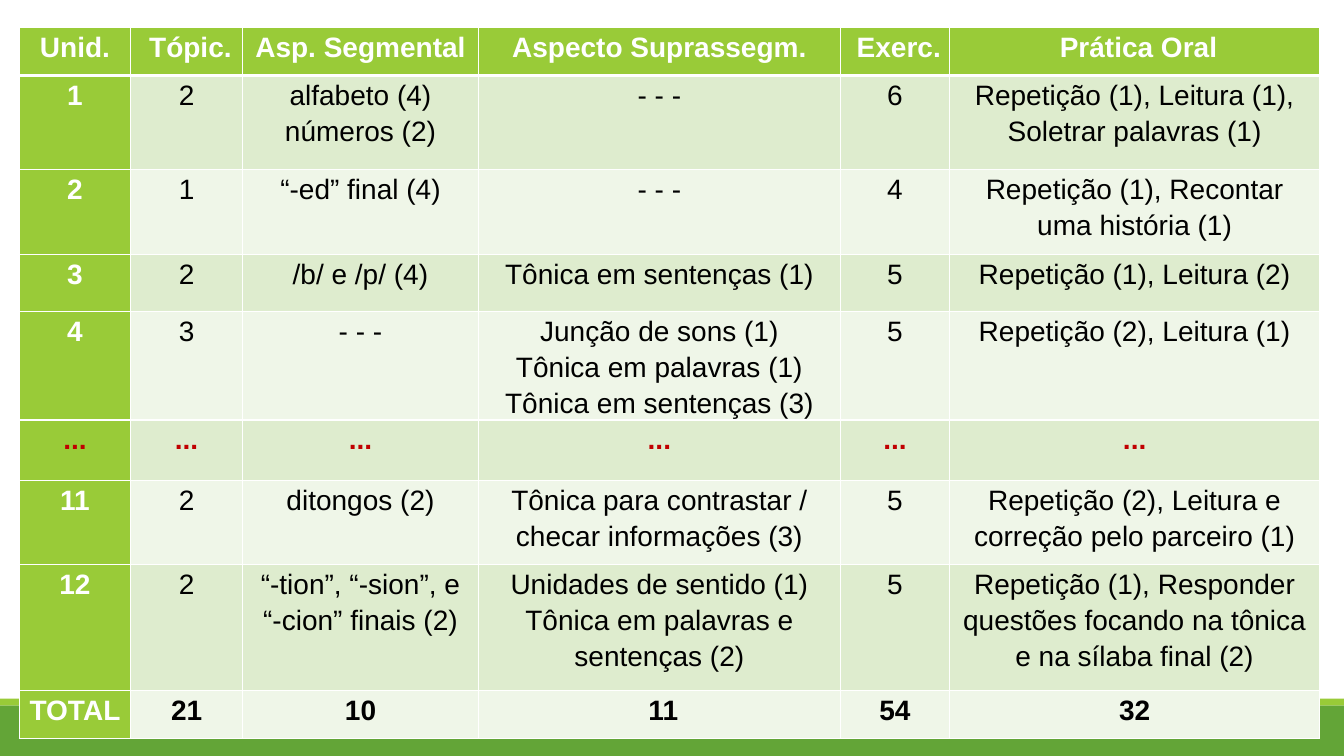
from lxml import etree
from pptx import Presentation
from pptx.dml.color import RGBColor
from pptx.enum.shapes import MSO_SHAPE
from pptx.enum.text import MSO_ANCHOR, PP_ALIGN
from pptx.oxml.ns import qn
from pptx.util import Pt

RECTANGLE = MSO_SHAPE.RECTANGLE
CENTER = PP_ALIGN.CENTER
TOP = MSO_ANCHOR.TOP

SLIDE_WIDTH, SLIDE_HEIGHT = 960, 540
GREEN, DARK_GREEN = "99CB38", "63A537"
ROW_FILLS = ("DEECCE", "EFF6E8")
WHITE, BLACK, RED = "FFFFFF", "000000", "C00000"

COLUMN_WIDTHS = (79.5, 80, 168.5, 258.5, 78, 264.5)
ROW_HEIGHTS = (34.5, 67, 61, 40.5, 77.5, 43.5, 60, 90, 34)
ELLIPSIS = "..."
ROWS = (
    ("Unid.", " Tópic.", "Asp. Segmental", "Aspecto Suprassegm.", " Exerc.", " Prática Oral"),
    ("1", "2", "alfabeto (4)\nnúmeros (2)", "- - -", "6",
     "Repetição (1), Leitura (1), Soletrar palavras (1)"),
    ("2", "1", "“-ed” final (4)", "- - -", "4", "Repetição (1), Recontar uma história (1)"),
    ("3", "2", "/b/ e /p/ (4)", "Tônica em sentenças (1)", "5", "Repetição (1), Leitura (2)"),
    ("4", "3", "- - -",
     "Junção de sons (1)\nTônica em palavras (1)\nTônica em sentenças (3)", "5",
     "Repetição (2), Leitura (1)"),
    (ELLIPSIS,) * 6,
    ("11", "2", "ditongos (2)", "Tônica para contrastar / checar informações (3)", "5",
     "Repetição (2), Leitura e correção pelo parceiro (1)"),
    ("12", "2", "“-tion”, “-sion”, e\n“-cion” finais (2)",
     "Unidades de sentido (1) Tônica em palavras e sentenças (2)", "5",
     "Repetição (1), Responder questões focando na tônica e na sílaba final (2)"),
    ("TOTAL", "21", "10", " 11", "54", "32"),
)


def set_fill(target, color):
    target.fill.solid()
    target.fill.fore_color.rgb = RGBColor.from_string(color)


def write_text(text_frame, text, *, color, bold=False, size=20, font="Arial"):
    """Write one centred paragraph per line of text."""
    text_frame.text = text
    for paragraph in text_frame.paragraphs:
        paragraph.alignment = CENTER
        paragraph.line_spacing = 1.15
        for run in paragraph.runs:
            run.font.name = font
            run.font.size = Pt(size)
            run.font.bold = bold
            run.font.color.rgb = RGBColor.from_string(color)


def set_borders(cell, **widths):
    """Draw white borders; widths maps the sides L, R, T, B to points."""
    properties = cell._tc.get_or_add_tcPr()
    for side, width in widths.items():
        line = etree.SubElement(properties, qn(f"a:ln{side}"), w=str(Pt(width)))
        fill = etree.SubElement(line, qn("a:solidFill"))
        etree.SubElement(fill, qn("a:srgbClr"), val=WHITE)


def add_footer_bands(slide, left, top, width, height, accent_height=5):
    bands = ((top, accent_height, GREEN), (top + accent_height, height - accent_height, DARK_GREEN))
    for band_top, band_height, color in bands:
        band = slide.shapes.add_shape(RECTANGLE, Pt(left), Pt(band_top), Pt(width), Pt(band_height))
        band.shadow.inherit = False
        band.line.fill.background()
        set_fill(band, color)


def format_cell(cell, text, row, column):
    is_header = row == 0
    is_label = is_header or column == 0
    is_total = row == len(ROWS) - 1
    is_ellipsis = text == ELLIPSIS

    cell.margin_left = cell.margin_right = Pt(5)
    cell.margin_top = cell.margin_bottom = 0
    cell.vertical_anchor = TOP
    set_borders(cell, L=1, R=1, T=3 if row == 1 else 1, B=3 if is_header else 1)
    set_fill(cell, GREEN if is_label else ROW_FILLS[(row - 1) % 2])
    color = RED if is_ellipsis else WHITE if is_label else BLACK
    write_text(cell.text_frame, text, color=color, bold=is_label or is_total or is_ellipsis)


def add_units_table(slide, left, top):
    frame = slide.shapes.add_table(len(ROWS), len(COLUMN_WIDTHS), Pt(left), Pt(top),
                                   Pt(sum(COLUMN_WIDTHS)), Pt(sum(ROW_HEIGHTS)))
    table = frame.table
    table.first_row = table.horz_banding = False
    for column, width in zip(table.columns, COLUMN_WIDTHS):
        column.width = Pt(width)
    for row, height in zip(table.rows, ROW_HEIGHTS):
        row.height = Pt(height)
    for row, texts in enumerate(ROWS):
        for column, text in enumerate(texts):
            format_cell(table.cell(row, column), text, row, column)


def main():
    presentation = Presentation()
    presentation.slide_width = Pt(SLIDE_WIDTH)
    presentation.slide_height = Pt(SLIDE_HEIGHT)
    slide = presentation.slides.add_slide(presentation.slide_layouts[6])
    add_footer_bands(slide, 0, 499, SLIDE_WIDTH, SLIDE_HEIGHT - 499)
    add_units_table(slide, 13.8, 19.5)
    presentation.save("out.pptx")


if __name__ == "__main__":
    main()
